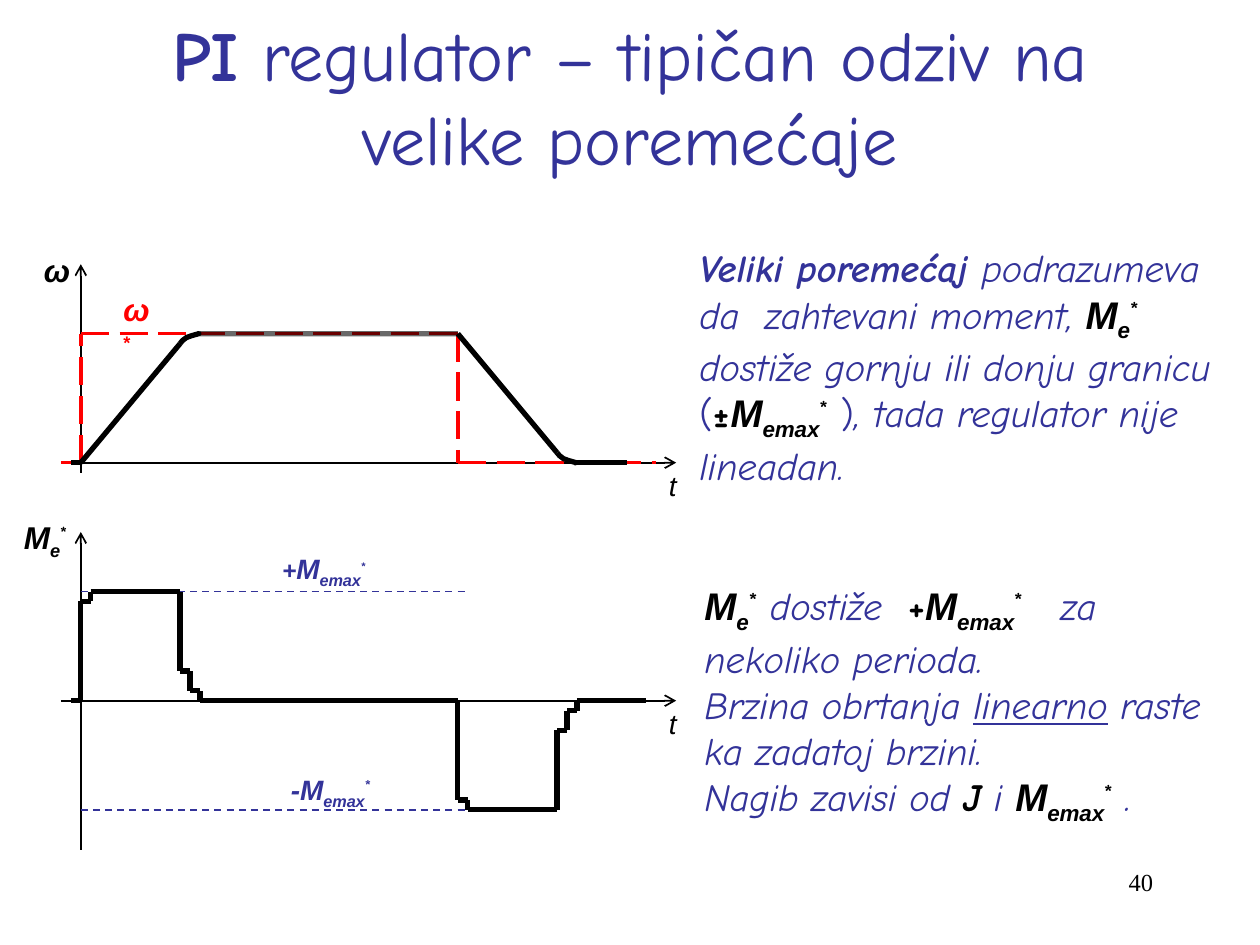
from dataclasses import dataclass

from lxml import etree
from pptx import Presentation
from pptx.dml.color import RGBColor
from pptx.enum.dml import MSO_LINE
from pptx.enum.shapes import MSO_CONNECTOR
from pptx.enum.text import MSO_ANCHOR, MSO_AUTO_SIZE, PP_ALIGN
from pptx.oxml.ns import qn
from pptx.util import Pt

STRAIGHT = MSO_CONNECTOR.STRAIGHT
DASH, LONG_DASH = MSO_LINE.DASH, MSO_LINE.LONG_DASH
LEFT, CENTER, RIGHT = PP_ALIGN.LEFT, PP_ALIGN.CENTER, PP_ALIGN.RIGHT
MIDDLE = MSO_ANCHOR.MIDDLE
NO_FIT = MSO_AUTO_SIZE.NONE
TITLE_ONLY = 5


@dataclass(frozen=True)
class Theme:
    hand: str = "Comic Neue"
    sans: str = "Arial"
    serif: str = "Times New Roman"
    blue: str = "333399"
    black: str = "000000"
    red: str = "FF0000"
    white: str = "FFFFFF"
    title: int = 40
    body: int = 22
    symbol: int = 18
    label: int = 16
    small: int = 14
    thin: int = 1
    medium: int = 2
    thick: int = 3


THEME = Theme()


@dataclass(frozen=True)
class Span:
    text: str
    font: str = THEME.hand
    color: str = THEME.blue
    bold: bool = False
    italic: bool = True
    underline: bool = False
    baseline: int = 0
    size: int = 0


def moment(subscript, color=THEME.black, star_size=0):
    """Spans of the torque symbol M with its subscript and a raised star."""
    return [
        Span("M", THEME.sans, color, bold=True),
        Span(subscript, THEME.sans, color, bold=True, baseline=-25),
        Span("*", color=color, bold=True, italic=False, baseline=30, size=star_size),
    ]


class Plot:
    """Graph grid: whole steps right of and above an origin."""
    STEP = 5.67
    LEFT = 46.2

    def __init__(self, baseline):
        self.baseline = baseline

    def at(self, column, row):
        return self.LEFT + column * self.STEP, self.baseline - row * self.STEP


class Page:
    def __init__(self, deck, theme):
        self.theme = theme
        self.slide = deck.slides.add_slide(deck.slide_layouts[TITLE_ONLY])

    def add_spans(self, para, spans, size, align=LEFT):
        para.alignment = align
        para.font.size = Pt(size)
        for item in spans:
            span = para.add_run()
            span.text = item.text
            font = span.font
            font.name = item.font
            font.bold, font.italic = item.bold, item.italic
            font.color.rgb = RGBColor.from_string(item.color)
            if item.underline:
                font.underline = True
            if item.size:
                font.size = Pt(item.size)
            if item.baseline:
                span._r.get_or_add_rPr().set("baseline", str(item.baseline * 1000))

    def title(self, spans, left, top, width, height):
        box = self.slide.shapes.title
        box.left, box.top, box.width, box.height = map(Pt, (left, top, width, height))
        frame = box.text_frame
        frame.auto_size = NO_FIT
        frame.vertical_anchor = MIDDLE
        self.add_spans(frame.paragraphs[0], spans, self.theme.title, CENTER)

    def text(self, paragraphs, size, left, top, width, height, wrap=True, inset=True, align=LEFT):
        box = self.slide.shapes.add_textbox(*map(Pt, (left, top, width, height)))
        frame = box.text_frame
        frame.word_wrap = wrap
        if not inset:
            frame.margin_left = frame.margin_right = 0
            frame.margin_top = frame.margin_bottom = 0
        for index, spans in enumerate(paragraphs):
            para = frame.add_paragraph() if index else frame.paragraphs[0]
            self.add_spans(para, spans, size, align)

    def line(self, start, end, color, width, dash=None, arrow=False, opacity=100):
        line = self.slide.shapes.add_connector(STRAIGHT, *map(Pt, (*start, *end)))
        line.line.color.rgb = RGBColor.from_string(color)
        line.line.width = Pt(width)
        if dash:
            line.line.dash_style = dash
        properties = line._element.spPr
        if opacity < 100:
            fill = properties.find(".//" + qn("a:srgbClr"))
            etree.SubElement(fill, qn("a:alpha"), val=str(opacity * 1000))
        if arrow:
            etree.SubElement(properties.find(qn("a:ln")), qn("a:tailEnd"), type="arrow")
        etree.SubElement(properties, qn("a:effectLst"))

    def trace(self, plot, points, color, width, dash=None):
        """Join successive grid points with straight lines."""
        for start, end in zip(points, points[1:]):
            self.line(plot.at(*start), plot.at(*end), color, width, dash)

    def axes(self, plot, bottom, top):
        for start, end in (((0, bottom), (0, top)), ((-2, 0), (60, 0))):
            self.line(plot.at(*start), plot.at(*end), self.theme.black,
                      self.theme.thin, arrow=True)

    def bend(self, plot, column, row, direction):
        """Rounded corner into a level stretch; direction is 1 rising, -1 falling."""
        offsets = ((0, 0), (0.25, 0.3), (0.65, 0.6), (1.2, 0.8), (1.9, 1), (1.75, 1))
        points = [tuple(map(Pt, plot.at(column + x, row + direction * y))) for x, y in offsets]
        builder = self.slide.shapes.build_freeform(*points[0], scale=1.0)
        builder.add_line_segments(points[1:], close=False)
        shape = builder.convert_to_shape()
        shape.shadow.inherit = False
        shape.fill.solid()
        shape.fill.fore_color.rgb = RGBColor.from_string(self.theme.white)
        shape.line.color.rgb = RGBColor.from_string(self.theme.black)
        shape.line.width = Pt(self.theme.thick)


def draw_speed(page):
    theme, plot = page.theme, Plot(264.4)
    page.axes(plot, -1, 20)
    reference = [(-2, 0), (0, 0), (0, 13), (38, 13), (38, 0), (58, 0)]
    page.trace(plot, reference, theme.red, theme.medium, LONG_DASH)
    for points in ([(-1, 0), (0, 0), (10, 12)], [(38, 13), (48, 1)], [(50, 0), (55, 0)]):
        page.trace(plot, points, theme.black, theme.thick)
    page.line(plot.at(12, 13), plot.at(38, 13), theme.black, theme.thick, opacity=58)
    page.bend(plot, 10, 12, 1)
    page.bend(plot, 48, 1, -1)
    omega = Span("ω", theme.sans, theme.black, bold=True)
    page.text([[omega]], theme.symbol, 18, 139.7, 27.4, 28.8, wrap=False)
    reference_label = [Span("ω", theme.sans, theme.red, bold=True),
                       Span("*", theme.sans, theme.red, bold=True, italic=False, baseline=30)]
    page.text([reference_label], theme.symbol, 63.4, 162, 31.7, 28.8)


def draw_torque(page):
    theme, plot = page.theme, Plot(400.4)
    page.axes(plot, -15, 17)
    for limit in (11, -11):
        page.trace(plot, [(0, limit), (39, limit)], theme.blue, theme.thin, DASH)
    pulse = [(0, 0), (0, 10), (1, 10), (1, 11), (10, 11), (10, 3),
             (11, 3), (11, 1), (12, 1), (12, 0)]
    braking = [(column + 38, -row) for column, row in pulse]
    page.trace(plot, [(-1, 0), *pulse, *braking, (57, 0)], theme.black, theme.thick)
    plus = Span("+", theme.sans, bold=True, size=theme.small)
    minus = Span("-", theme.sans, bold=True)
    page.text([[plus, *moment("emax", theme.blue, theme.small)]], theme.label,
              154.1, 311.8, 76.3, 26.6)
    page.text([[minus, *moment("emax", theme.blue)]], theme.label, 159.1, 437.8, 76.3, 26.6)
    page.text([moment("e")], theme.symbol, 6.5, 292.3, 42.5, 28.8, wrap=False)


def main():
    deck = Presentation()
    deck.slide_width, deck.slide_height = Pt(720), Pt(540)
    theme = THEME
    page = Page(deck, theme)
    page.title([Span("PI", bold=True, italic=False),
                Span(" regulator – tipičan odziv na velike poremećaje", italic=False)],
               54, 9.4, 612, 90)
    draw_speed(page)
    draw_torque(page)
    for top in (264.4, 400.4):
        page.text([[Span("t", theme.sans, theme.black)]], theme.label,
                  375.1, top, 19.4, 26.6, wrap=False)

    definition = [
        Span("Veliki poremećaj ", bold=True), Span("podrazumeva da  zahtevani moment, "),
        *moment("e"), Span(" dostiže gornju ili donju granicu "), Span("(", italic=False),
        Span("±", color=theme.black, bold=True, italic=False), *moment("emax"),
        Span(" )", italic=False), Span(", tada regulator nije lineadan."),
    ]
    page.text([definition], theme.body, 399.6, 139.7, 308.9, 133.2, inset=False)
    response = [
        [*moment("e"), Span(" dostiže  "),
         Span("+", color=theme.black, bold=True, italic=False),
         *moment("emax"), Span("   za nekoliko perioda.")],
        [Span("Brzina obrtanja "), Span("linearno", underline=True),
         Span(" raste ka zadatoj brzini.")],
        [Span("Nagib zavisi od "), Span("J", color=theme.black, bold=True),
         Span(" i "), *moment("emax"), Span(" .")],
    ]
    page.text(response, theme.body, 402.5, 332.6, 308.9, 133.2, inset=False)
    page.text([[Span("40", theme.serif, theme.black, italic=False)]], theme.small,
              516.2, 491.8, 149.8, 36, align=RIGHT)
    deck.save("out.pptx")


if __name__ == "__main__":
    main()
